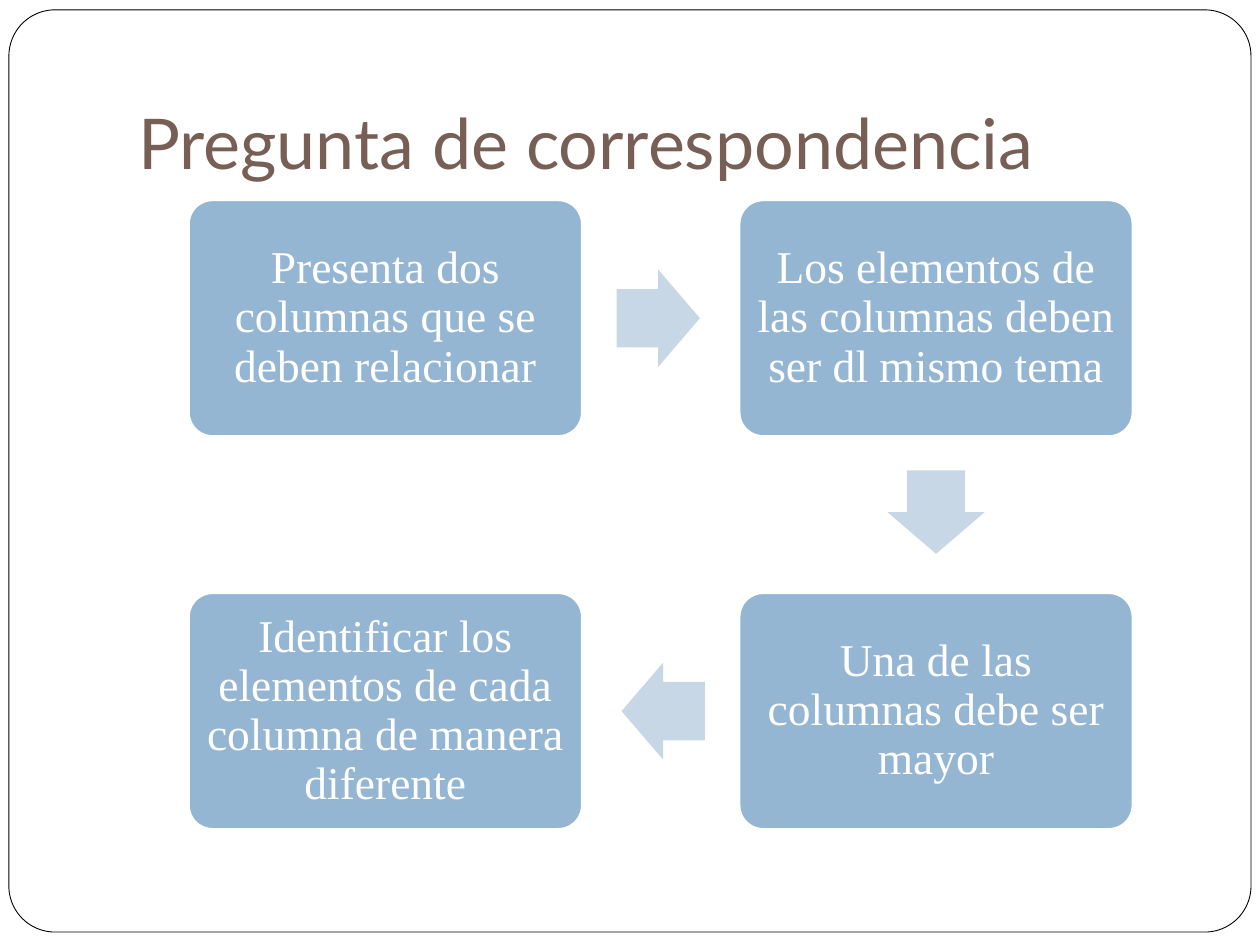
"""Build a slide with a four-step flow describing matching questions."""
from math import atan2, cos, degrees, radians, sin

from pptx import Presentation
from pptx import util as u
from pptx.dml.color import RGBColor
from pptx.enum import shapes, text

TITLE = "Pregunta de correspondencia"
STEPS = [
    ("Presenta dos columnas que se deben relacionar", 0, 0),
    ("Los elementos de las columnas deben ser dl mismo tema", 1, 0),
    ("Una de las columnas debe ser mayor", 1, 1),
    ("Identificar los elementos de cada columna de manera diferente", 0, 1),
]

THEME = {
    "paper": "FFFFFF", "frame": "000000", "title": "775F55",
    "step": "94B6D2", "arrow": "C8D7E5", "step_text": "FFFFFF",
    "title_font": "Lato", "step_font": "Times New Roman",
    "title_size": 40, "step_size": 26,
}
GRID = {"left": 3.81, "top": 4.04, "pitch_x": 11.1, "pitch_y": 7.92}
STEP_SIZE = (7.92, 4.75)
ARROW_SIZE = (1.68, 1.96)
ARROW_SETBACK = 0.05
TITLE_FRAME = {
    "word_wrap": True, "vertical_anchor": text.MSO_ANCHOR.BOTTOM,
    "margin_left": u.Cm(0.25), "margin_right": u.Cm(0.25),
    "margin_top": u.Cm(0.13), "margin_bottom": u.Cm(0.25),
}
STEP_FRAME = {
    "word_wrap": True, "vertical_anchor": text.MSO_ANCHOR.MIDDLE,
    **{f"margin_{side}": u.Cm(0.14) for side in ("left", "right", "top", "bottom")},
}
STEP_PARA = {"alignment": text.PP_ALIGN.CENTER, "line_spacing": 0.9}


def color(name):
    return RGBColor.from_string(THEME[name])


def apply(target, values):
    for name, value in values.items():
        setattr(target, name, value)


def add_shape(page, kind, area, adjustments, fill, line=None, width=1):
    shape = page.shapes.add_shape(kind, *map(u.Cm, area))
    shape.shadow.inherit = False
    for index, value in enumerate(adjustments):
        shape.adjustments[index] = value
    shape.fill.solid()
    shape.fill.fore_color.rgb = color(fill)
    if line:
        shape.line.color.rgb = color(line)
        shape.line.width = u.Pt(width)
    else:
        shape.line.fill.background()
    return shape


def write(box, words, frame, para_values, font, size, ink):
    apply(box.text_frame, frame)
    para = box.text_frame.paragraphs[0]
    apply(para, para_values)
    span = para.add_run()
    span.text = words
    apply(span.font, {"name": THEME[font], "size": u.Pt(THEME[size])})
    span.font.color.rgb = color(ink)


def step_center(column, row):
    return (GRID["left"] + column * GRID["pitch_x"] + STEP_SIZE[0] / 2,
            GRID["top"] + row * GRID["pitch_y"] + STEP_SIZE[1] / 2)


def centered(center, size):
    return (center[0] - size[0] / 2, center[1] - size[1] / 2, *size)


def add_step(page, words, center):
    box = add_shape(page, shapes.MSO_SHAPE.ROUNDED_RECTANGLE,
                    centered(center, STEP_SIZE), [0.1], "step", "paper")
    write(box, words, STEP_FRAME, STEP_PARA, "step_font", "step_size", "step_text")


def add_arrow(page, start, end):
    angle = degrees(atan2(end[1] - start[1], end[0] - start[0]))
    turn = radians(angle)
    center = ((start[0] + end[0]) / 2 - ARROW_SETBACK * cos(turn),
              (start[1] + end[1]) / 2 - ARROW_SETBACK * sin(turn))
    arrow = add_shape(page, shapes.MSO_SHAPE.RIGHT_ARROW,
                      centered(center, ARROW_SIZE), [0.6, 0.5], "arrow")
    arrow.rotation = angle


def main():
    deck = Presentation()
    apply(deck, {"slide_width": u.Cm(25.4), "slide_height": u.Cm(19.05)})
    page = deck.slides.add_slide(deck.slide_layouts[6])
    add_shape(page, shapes.MSO_SHAPE.ROUNDED_RECTANGLE,
              (0.18, 0.2, 25.04, 18.59), [0.05], "paper", "frame", 0.5)
    title = page.shapes.add_textbox(*map(u.Cm, (2.54, 0.76, 21.59, 3.18)))
    write(title, TITLE, TITLE_FRAME, {}, "title_font", "title_size", "title")
    centers = [step_center(column, row) for _, column, row in STEPS]
    for (words, _, _), center in zip(STEPS, centers):
        add_step(page, words, center)
    for start, end in zip(centers, centers[1:]):
        add_arrow(page, start, end)
    deck.save("out.pptx")


if __name__ == "__main__":
    main()
